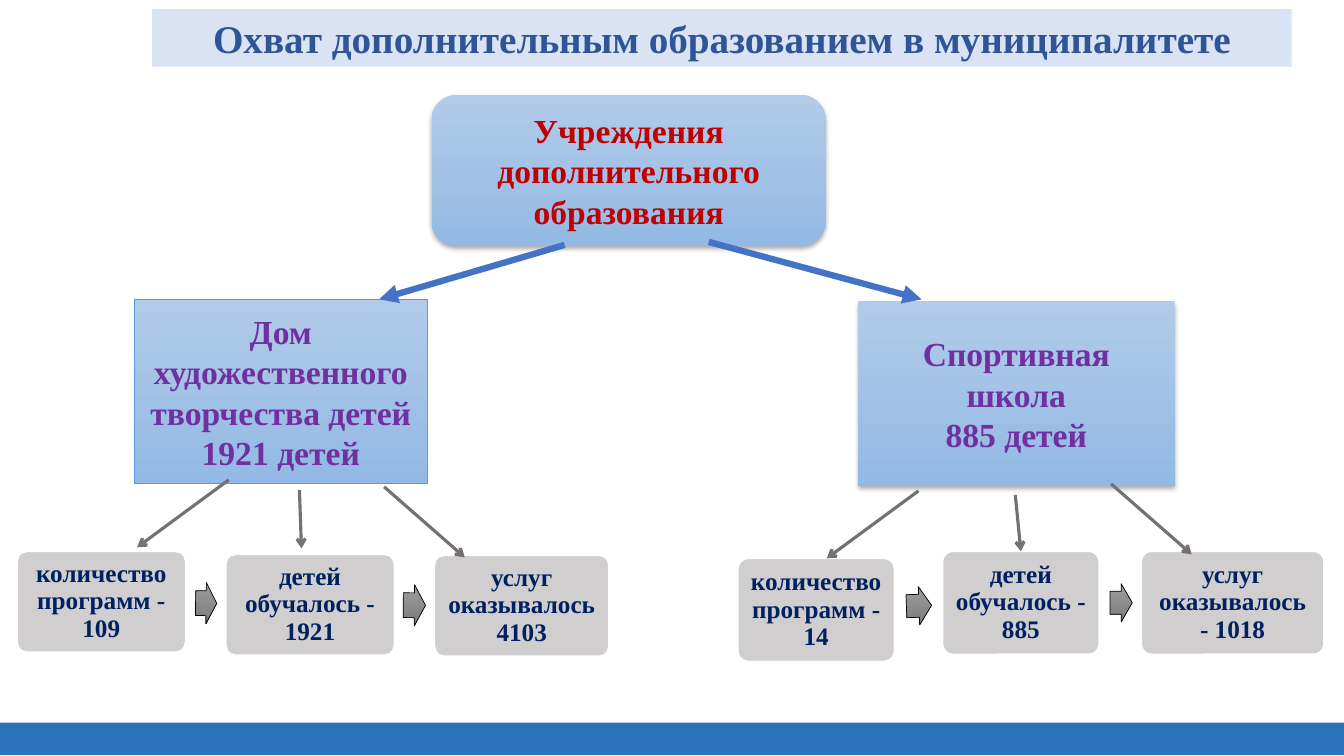
from dataclasses import dataclass
from typing import Optional

import pptx
import pptx.dml.color
import pptx.enum.shapes
import pptx.enum.text
import pptx.oxml
import pptx.oxml.ns
import pptx.util
from pptx.util import Inches

SHAPES = pptx.enum.shapes.MSO_SHAPE


@dataclass(frozen=True)
class Theme:
    font: str = "Times New Roman"
    title_size: int = 28
    box_size: int = 24
    card_size: int = 18
    footer: str = "2973BA"
    title_fill: str = "DAE3F3"
    title_text: str = "2F5597"
    root_text: str = "C00000"
    school_text: str = "7030A0"
    box_top: str = "B1CBE9"
    box_bottom: str = "93B9E4"
    box_line: str = "5B9BD5"
    card_fill: str = "D0CECE"
    card_line: str = "FFFFFF"
    card_text: str = "002060"
    step_top: str = "9D9D9D"
    step_bottom: str = "7C7C7C"
    step_line: str = "000000"
    branch: str = "4472C4"
    twig: str = "767171"


THEME = Theme()


@dataclass(frozen=True)
class Box:
    left: float
    top: float
    width: float
    height: float
    text: str
    color: str = THEME.school_text
    rounded: bool = False
    outlined: bool = False


@dataclass(frozen=True)
class Card:
    left: float
    top: float
    width: float
    height: float
    text: str


@dataclass(frozen=True)
class Step:
    left: float
    top: float
    width: float
    height: float
    rotation: float = 0


@dataclass(frozen=True)
class Arrow:
    start: tuple[float, float]
    end: tuple[float, float]
    color: str = THEME.twig
    width: float = 2.25
    head: str = "arrow"
    card: Optional[int] = None  # index of the card whose top middle it meets


BOXES = [
    Box(4.28, 0.94, 3.91, 1.5, "Учреждения дополнительного образования",
        THEME.root_text, rounded=True),
    Box(1.33, 2.97, 2.91, 1.83, "Дом художественного творчества детей 1921 детей",
        outlined=True),
    Box(8.51, 2.99, 3.14, 1.83, "Спортивная\vшкола\n885 детей"),
]
CARDS = [
    Card(0.17, 5.47, 1.67, 1, "количество программ - 109"),
    Card(2.24, 5.5, 1.67, 1, "детей обучалось - 1921"),
    Card(4.31, 5.51, 1.73, 1, "услуг оказывалось 4103"),
    Card(7.32, 5.54, 1.55, 1.02, "количество программ - 14"),
    Card(9.35, 5.47, 1.55, 1.02, "детей обучалось - 885"),
    Card(11.32, 5.47, 1.81, 1.02, "услуг оказывалось - 1018"),
]
STEPS = [
    Step(1.94, 5.78, 0.21, 0.41, 0.8),
    Step(4, 5.8, 0.22, 0.41, 0.4),
    Step(8.99, 5.82, 0.25, 0.38, 358),
    Step(11.01, 5.79, 0.22, 0.38),
]
ARROWS = [
    Arrow((5.6, 2.43), (3.76, 2.97), THEME.branch, 4.5, "triangle"),
    Arrow((7.03, 2.4), (9.14, 2.97), THEME.branch, 4.5, "triangle"),
    Arrow((2.27, 4.76), (1.36, 5.43)),
    Arrow((2.97, 4.86), (2.99, 5.44)),
    Arrow((3.81, 4.83), (4.61, 5.53)),
    Arrow((9.11, 4.87), (8.2, 5.54)),
    Arrow((10.07, 4.91), (10.08, 5.5), card=4),
    Arrow((11.02, 4.8), (11.82, 5.5)),
]


def rgb(value: str) -> pptx.dml.color.RGBColor:
    return pptx.dml.color.RGBColor.from_string(value)


def drawing_element(tag: str, attributes: str = "", content: str = ""):
    namespace = pptx.oxml.ns.nsdecls("a")
    return pptx.oxml.parse_xml(f"<a:{tag} {namespace} {attributes}>{content}</a:{tag}>")


def write_text(shape, text: str, *, size: int, color: str, spacing: float = 1) -> None:
    frame = shape.text_frame
    frame.word_wrap = True
    frame.vertical_anchor = pptx.enum.text.MSO_ANCHOR.MIDDLE
    frame.text = text
    for para in frame.paragraphs:
        para.alignment = pptx.enum.text.PP_ALIGN.CENTER
        para.line_spacing = spacing
        for span in para.runs:
            span.font.name = THEME.font
            span.font.size = pptx.util.Pt(size)
            span.font.bold = True
            span.font.color.rgb = rgb(color)


def add_plain(page, kind, item, *, fill: str, fill_end: Optional[str] = None,
              line: Optional[str] = None, line_width: float = 0.5):
    """Add a shadowless shape; fill_end makes its fill run from top to bottom."""
    shape = page.shapes.add_shape(kind, Inches(item.left), Inches(item.top),
                                  Inches(item.width), Inches(item.height))
    shape.shadow.inherit = False
    if fill_end:
        shape.fill.gradient()
        shape.fill.gradient_angle = 270
        for stop, color in zip(shape.fill.gradient_stops, (fill, fill_end)):
            stop.color.rgb = rgb(color)
    else:
        shape.fill.solid()
        shape.fill.fore_color.rgb = rgb(fill)
    if line:
        shape.line.color.rgb = rgb(line)
        shape.line.width = pptx.util.Pt(line_width)
    else:
        shape.line.fill.background()
    return shape


def add_title(page, text: str) -> None:
    title = page.shapes.title
    title.left, title.top = Inches(1.51), Inches(0.09)
    title.width, title.height = Inches(11.3), Inches(0.57)
    title.fill.solid()
    title.fill.fore_color.rgb = rgb(THEME.title_fill)
    title.text_frame.auto_size = pptx.enum.text.MSO_AUTO_SIZE.NONE
    write_text(title, text, size=THEME.title_size, color=THEME.title_text)


def add_box(page, box: Box) -> None:
    kind = SHAPES.ROUNDED_RECTANGLE if box.rounded else SHAPES.RECTANGLE
    shape = add_plain(page, kind, box, fill=THEME.box_top, fill_end=THEME.box_bottom,
                      line=THEME.box_line if box.outlined else None)
    if not box.outlined:
        effects = shape.element.spPr.find(pptx.oxml.ns.qn("a:effectLst"))
        effects.append(drawing_element(
            "outerShdw", 'blurRad="44450" dist="27940" dir="5400000" rotWithShape="0"',
            '<a:srgbClr val="000000"><a:alpha val="32000"/></a:srgbClr>'))
    write_text(shape, box.text, size=THEME.box_size, color=box.color)


def add_card(page, card: Card):
    shape = add_plain(page, SHAPES.ROUNDED_RECTANGLE, card, fill=THEME.card_fill,
                      line=THEME.card_line, line_width=1)
    shape.adjustments[0] = 0.1
    write_text(shape, card.text, size=THEME.card_size, color=THEME.card_text, spacing=0.9)
    return shape


def add_step(page, step: Step) -> None:
    shape = add_plain(page, SHAPES.RIGHT_ARROW, step, fill=THEME.step_top,
                      fill_end=THEME.step_bottom, line=THEME.step_line)
    shape.adjustments[0] = 0.6
    shape.rotation = step.rotation


def add_arrow(page, arrow: Arrow, cards: list) -> None:
    points = [Inches(value) for value in arrow.start + arrow.end]
    connector = page.shapes.add_connector(pptx.enum.shapes.MSO_CONNECTOR.STRAIGHT, *points)
    if arrow.card is not None:
        connector.end_connect(cards[arrow.card], 0)
    connector.line.color.rgb = rgb(arrow.color)
    connector.line.width = pptx.util.Pt(arrow.width)
    connector.line._get_or_add_ln().append(drawing_element("tailEnd", f'type="{arrow.head}"'))
    connector.element.spPr.append(drawing_element("effectLst"))


def main() -> None:
    deck = pptx.Presentation()
    deck.slide_width, deck.slide_height = Inches(13.33), Inches(7.5)
    page = deck.slides.add_slide(deck.slide_layouts[5])
    add_plain(page, SHAPES.RECTANGLE, Card(0, 7.17, 13.33, 0.32, ""), fill=THEME.footer)
    add_title(page, "Охват дополнительным образованием в муниципалитете")
    for box in BOXES:
        add_box(page, box)
    cards = [add_card(page, card) for card in CARDS]
    for step in STEPS:
        add_step(page, step)
    for arrow in ARROWS:
        add_arrow(page, arrow, cards)
    deck.save("out.pptx")


if __name__ == "__main__":
    main()
